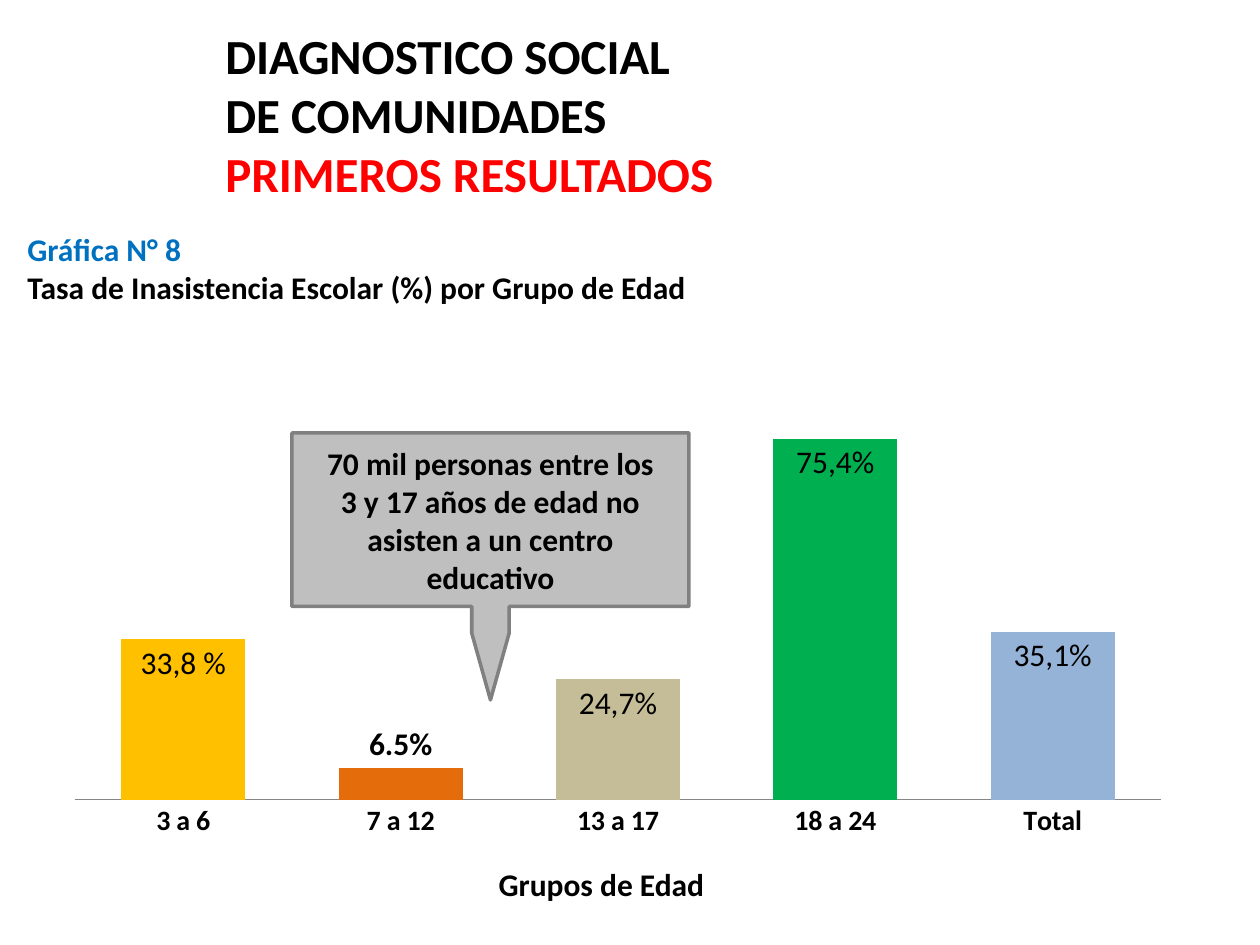
from lxml import etree
from pptx import Presentation
from pptx import util as u
from pptx.chart import data as chart_data
from pptx.dml.color import RGBColor
from pptx.enum import chart as ch, shapes, text
from pptx.oxml.ns import qn

COLORS = {
    "black": "000000", "red": "FF0000", "blue": "0070C0",
    "callout": "BFBFBF", "edge": "808080", "axis": "868686",
    "yellow": "FFC000", "orange": "E46C0A", "tan": "C4BD97",
    "green": "00B050", "sky": "95B3D7", "series": "4F81BD",
}
AGE_GROUPS = [
    ("3 a 6", 0.327, "yellow", "33,8 %"),
    ("7 a 12", 0.065, "orange", None),
    ("13 a 17", 0.245, "tan", "24,7%"),
    ("18 a 24", 0.735, "green", "75,4%"),
    ("Total", 0.342, "sky", "35,1%"),
]
PLOT_AREA = {"layoutTarget": "inner", "xMode": "edge", "yMode": "edge",
             "x": 0, "y": 0.17, "w": 0.97, "h": 0.72}


class SlideBuilder:
    font_name = "Calibri"
    emu_per_px = 914400 / 126

    def __init__(self, deck):
        self.slide = deck.slides.add_slide(deck.slide_layouts[6])

    def box(self, *lengths):
        return [u.Emu(round(n * self.emu_per_px)) for n in lengths]

    def color(self, name):
        return RGBColor.from_string(COLORS[name])

    def style(self, font, size, color="black", bold=True):
        font.name = self.font_name
        font.size = u.Pt(size)
        font.bold = bold
        font.color.rgb = self.color(color)

    def fill_frame(self, frame, paragraphs, size, align, anchor):
        frame.word_wrap = True
        frame.vertical_anchor = anchor
        for index, lines in enumerate(paragraphs):
            paragraph = frame.paragraphs[0] if index == 0 else frame.add_paragraph()
            paragraph.alignment = align
            for number, (words, color) in enumerate(lines):
                if number:
                    paragraph.add_line_break()
                run = paragraph.add_run()
                run.text = words
                self.style(run.font, size, color)

    def text(self, place, paragraphs, size, align=text.PP_ALIGN.LEFT,
             anchor=text.MSO_ANCHOR.TOP):
        frame = self.slide.shapes.add_textbox(*self.box(*place)).text_frame
        self.fill_frame(frame, paragraphs, size, align, anchor)

    def callout(self, place, paragraphs, size, adjustments):
        callout = self.slide.shapes.add_shape(
            shapes.MSO_SHAPE.DOWN_ARROW_CALLOUT, *self.box(*place))
        callout.shadow.inherit = False
        for index, value in enumerate(adjustments):
            callout.adjustments[index] = value
        callout.fill.solid()
        callout.fill.fore_color.rgb = self.color("callout")
        callout.line.color.rgb = self.color("edge")
        callout.line.width = u.Pt(2)
        self.fill_frame(callout.text_frame, paragraphs, size,
                        text.PP_ALIGN.CENTER, text.MSO_ANCHOR.MIDDLE)

    def place_plot(self, chart):
        plot_area = chart.plots[0]._element.getparent()
        for old in plot_area.findall(qn("c:layout")):
            plot_area.remove(old)
        layout = etree.Element(qn("c:layout"))
        manual = etree.SubElement(layout, qn("c:manualLayout"))
        for tag, value in PLOT_AREA.items():
            etree.SubElement(manual, qn(f"c:{tag}")).set("val", str(value))
        plot_area.insert(0, layout)

    def columns(self, place, groups):
        rates = chart_data.CategoryChartData(number_format="0.0%")
        rates.categories = [group[0] for group in groups]
        rates.add_series("Series 1", [group[1] for group in groups])
        chart = self.slide.shapes.add_chart(
            ch.XL_CHART_TYPE.COLUMN_CLUSTERED, *self.box(*place), rates).chart
        chart.has_legend = False
        chart.has_title = False
        self.style(chart.font, 10, bold=False)
        self.place_plot(chart)

        ages = chart.category_axis
        ages.major_tick_mark = ch.XL_TICK_MARK.NONE
        self.style(ages.tick_labels.font, 16)
        ages.format.line.color.rgb = self.color("axis")
        scale = chart.value_axis
        scale.minimum_scale, scale.maximum_scale = 0, 0.8
        scale.has_major_gridlines = False
        scale.visible = False

        plot = chart.plots[0]
        plot.gap_width, plot.overlap = 75, 40
        plot.vary_by_categories = False
        series = plot.series[0]
        series.format.fill.solid()
        series.format.fill.fore_color.rgb = self.color("series")
        labels = series.data_labels
        labels.show_value = True
        labels.number_format = "0.0%"
        labels.number_format_is_linked = False
        labels.position = ch.XL_LABEL_POSITION.INSIDE_END
        self.style(labels.font, 18)

        for index, (_, _, color, caption) in enumerate(groups):
            point = series.points[index]
            point.format.fill.solid()
            point.format.fill.fore_color.rgb = self.color(color)
            label = point.data_label
            if caption:
                run = label.text_frame.paragraphs[0].add_run()
                run.text = caption
                self.style(run.font, 18, bold=False)
                label.position = ch.XL_LABEL_POSITION.INSIDE_END
            else:
                self.style(label.font, 18)
                label.position = ch.XL_LABEL_POSITION.OUTSIDE_END


def main():
    deck = Presentation()
    deck.slide_width, deck.slide_height = u.Inches(10), u.Inches(7.5)
    page = SlideBuilder(deck)
    page.columns((74, 314, 1121, 546), AGE_GROUPS)
    page.text((213, 20, 1071, 188),
              [[("DIAGNOSTICO SOCIAL", "black"), ("DE COMUNIDADES", "black"),
                ("PRIMEROS RESULTADOS", "red")]],
              28, anchor=text.MSO_ANCHOR.MIDDLE)
    page.text((15, 224, 790, 89),
              [[("Gráfica N° 8", "blue")],
               [("Tasa de Inasistencia Escolar (%) por Grupo de Edad", "black")]], 18)
    page.callout((292, 433, 397, 267),
                 [[("70 mil personas entre los", "black"),
                   ("3 y 17 años de edad no asisten a un centro educativo", "black")]],
                 18, (0.25, 0.07, 0.25, 0.65))
    page.text((398, 859, 407, 55), [[("Grupos de Edad", "black")]], 18,
              align=text.PP_ALIGN.CENTER)
    deck.save("out.pptx")


if __name__ == "__main__":
    main()
